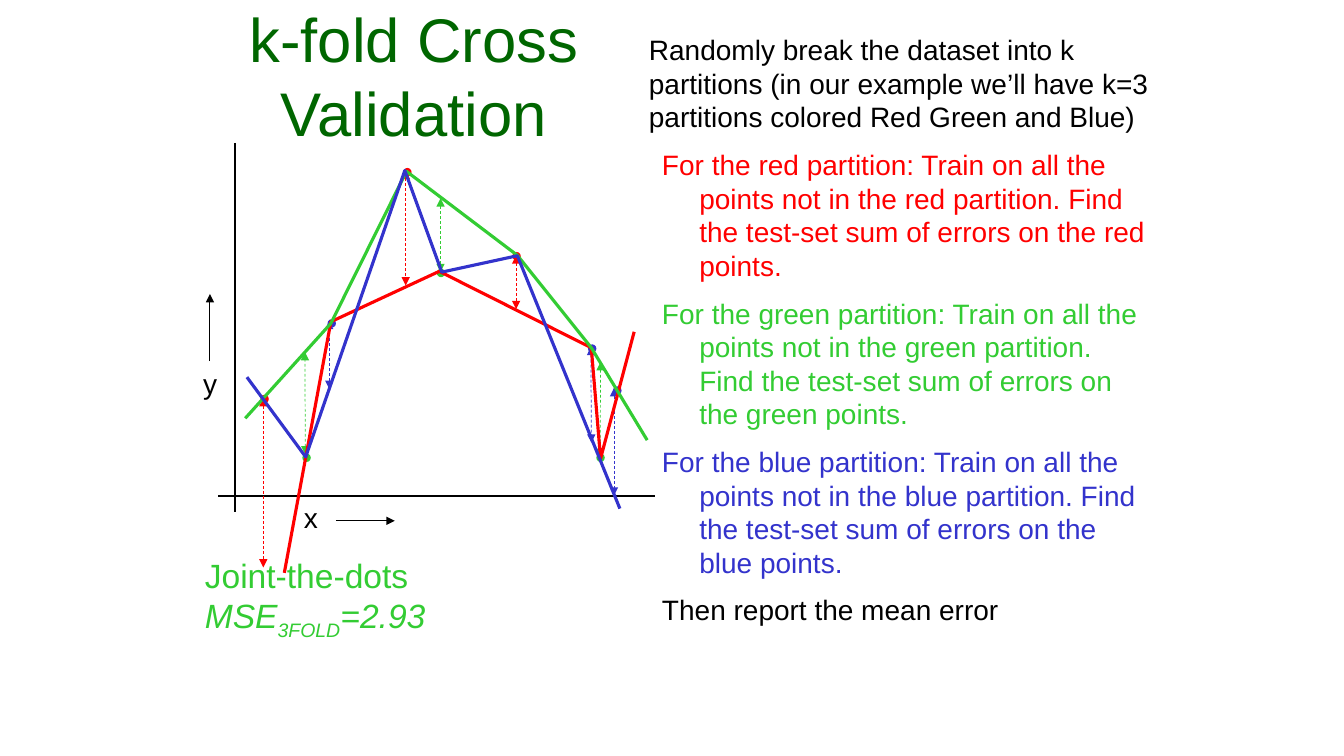
from dataclasses import dataclass

from pptx import Presentation
from pptx.dml.color import RGBColor
from pptx.enum.dml import MSO_LINE
from pptx.enum.shapes import MSO_CONNECTOR, MSO_SHAPE
from pptx.enum.text import MSO_ANCHOR, MSO_AUTO_SIZE, PP_ALIGN
from pptx.oxml.ns import qn
from pptx.util import Inches, Pt
from lxml.etree import SubElement


@dataclass(frozen=True)
class Theme:
    font: str = "Arial"
    title: str = "006600"
    ink: str = "000000"
    red: str = "FF0000"
    green: str = "33CC33"
    blue: str = "3333CC"
    title_size: int = 44
    result_size: int = 24
    body_size: int = 20
    axis_width: float = 1.5
    arrow_width: float = 0.75
    error_width: float = 0.5
    fit_width: float = 2.25


T = Theme()
COLS, ROWS = 160, 90  # square cells, twelve to the inch

# Every position below is (column, row) on that grid.
DOTS = {
    T.red: [(31, 47), (48, 20), (61, 30)],
    T.green: [(36, 54), (52, 32), (71, 54)],
    T.blue: [(39, 38), (73, 46), (70, 41)],
}
ERRORS = {
    T.red: [((31.35, 47.4), (31.35, 67.55)), ((48.3, 20.3), (48.3, 34)),
            ((61.45, 30.4), (61.45, 36.8))],
    T.green: [((36.35, 54.1), (36.3, 41.9)), ((71.5, 43.1), (71.45, 54.4)),
              ((52.45, 23.6), (52.45, 32.4))],
    T.blue: [((39.2, 46.3), (39.2, 38.2)), ((70.35, 41.3), (70.4, 52.7)),
             ((73.1, 46.2), (73.1, 59))],
}
FITS = {
    T.red: [(75.5, 39.5), (71.5, 54.6), (70.4, 41.4), (52.3, 32.3),
            (39.4, 38.3), (33.85, 68.2)],
    T.green: [(29.2, 49.8), (39.4, 38.5), (48.4, 20.4), (61.6, 30.4),
              (70.4, 41.4), (77.05, 52.4)],
    T.blue: [(29.4, 44.9), (36.4, 54.4), (48.2, 20.3), (52.6, 32.4),
             (61.6, 30.45), (73.8, 60.55)],
}
STEPS = [
    ("Randomly break the dataset into k partitions (in our example we’ll "
     "have k=3 partitions colored Red Green and Blue)", T.ink),
    ("For the red partition: Train on all the points not in the red "
     "partition. Find the test-set sum of errors on the red points.", T.red),
    ("For the green partition: Train on all the points not in the green "
     "partition. Find the test-set sum of errors on the green points.", T.green),
    ("For the blue partition: Train on all the points not in the blue "
     "partition. Find the test-set sum of errors on the blue points.", T.blue),
    ("Then report the mean error", T.ink),
]


def cells(*counts):
    return [Inches(n / 12) for n in counts]


def rgb(color):
    return RGBColor.from_string(color)


def place(sp, *box):
    sp.left, sp.top, sp.width, sp.height = cells(*box)


def add_run(p, text, size, color, italic=None):
    r = p.add_run()
    r.text = text
    r.font.name = T.font
    r.font.size = Pt(size)
    r.font.color.rgb = rgb(color)
    r.font.italic = italic
    return r


def add_text(s, *box):
    """Add a wrapping text box and return its first paragraph."""
    tf = s.shapes.add_textbox(*cells(*box)).text_frame
    tf.word_wrap = True
    return tf.paragraphs[0]


def add_line(s, start, end, color, width, ends=(), dashed=False):
    """Draw a line; ends names the arrowheads: headEnd, tailEnd or both."""
    line = s.shapes.add_connector(MSO_CONNECTOR.STRAIGHT, *cells(*start, *end))
    line.line.color.rgb = rgb(color)
    line.line.width = Pt(width)
    if dashed:
        line.line.dash_style = MSO_LINE.DASH
    spPr = line._element.spPr
    for end_name in ends:
        SubElement(spPr.find(qn("a:ln")), qn(f"a:{end_name}"), type="triangle")
    SubElement(spPr, qn("a:effectLst"))


def add_dot(s, col, row, color):
    dot = s.shapes.add_shape(MSO_SHAPE.OVAL, *cells(col, row, 1, 1))
    dot.shadow.inherit = False
    dot.fill.solid()
    dot.fill.fore_color.rgb = rgb(color)
    dot.line.fill.background()


def add_fit(s, points, color):
    start, *rest = [cells(*point) for point in points]
    builder = s.shapes.build_freeform(*start)
    builder.add_line_segments(rest, close=False)
    fit = builder.convert_to_shape()
    fit.shadow.inherit = False
    fit.fill.background()
    fit.line.color.rgb = rgb(color)
    fit.line.width = Pt(T.fit_width)


def fill_title(s):
    title = s.shapes.title
    place(title, 23.2, 2.3, 52.15, 16)
    tf = title.text_frame
    tf.vertical_anchor = MSO_ANCHOR.BOTTOM
    tf.auto_size = MSO_AUTO_SIZE.NONE
    p = tf.paragraphs[0]
    p.alignment = PP_ALIGN.CENTER
    add_run(p, "k-fold Cross Validation", T.title_size, T.title)


def fill_steps(s):
    body = s.placeholders[1]
    place(body, 76.05, 3.3, 62.1, 73.9)
    tf = body.text_frame
    tf.auto_size = MSO_AUTO_SIZE.NONE
    for i, (text, color) in enumerate(STEPS):
        p = tf.add_paragraph() if i else tf.paragraphs[0]
        p.level = 1 if i else 0
        p.space_before = Pt(T.body_size / 2 if i else 0)
        pPr = p._p.get_or_add_pPr()
        pPr.set("marL", str(Inches(0.5 if i else 0)))
        pPr.set("indent", str(Inches(-0.37 if i else 0)))
        SubElement(pPr, qn("a:buNone"))
        add_run(p, text, T.body_size, color)


def draw_axes(s):
    for start, end in [((28, 17), (28, 61)), ((26, 59), (78, 59))]:
        add_line(s, start, end, T.ink, T.axis_width)
    for name, corner, start, end in [
        ("x", (35, 59), (40, 62), (47, 62)),
        ("y", (23, 43), (25, 43), (25, 35)),
    ]:
        add_run(add_text(s, *corner, 4, 5.2), name, T.body_size, T.ink)
        add_line(s, start, end, T.ink, T.arrow_width, ["tailEnd"])


def write_result(s):
    p = add_text(s, 23.2, 65.45, 50.9, 10.9)
    add_run(p, "Joint-the-dots ", T.result_size, T.green)
    add_run(p, "MSE", T.result_size, T.green, italic=True)
    fold = add_run(p, "3FOLD", T.result_size, T.green, italic=True)
    fold._r.get_or_add_rPr().set("baseline", "-25000")
    add_run(p, "=2.93", T.result_size, T.green, italic=True)


def main():
    prs = Presentation()
    prs.slide_width, prs.slide_height = cells(COLS, ROWS)
    s = prs.slides.add_slide(prs.slide_layouts[1])
    fill_title(s)
    draw_axes(s)
    for color, dots in DOTS.items():
        for col, row in dots:
            add_dot(s, col, row, color)
    fill_steps(s)
    for color, errors in ERRORS.items():
        for start, end in errors:
            add_line(s, start, end, color, T.error_width,
                     ["headEnd", "tailEnd"], dashed=True)
    write_result(s)
    for color, points in FITS.items():
        add_fit(s, points, color)
    prs.save("out.pptx")


if __name__ == "__main__":
    main()
